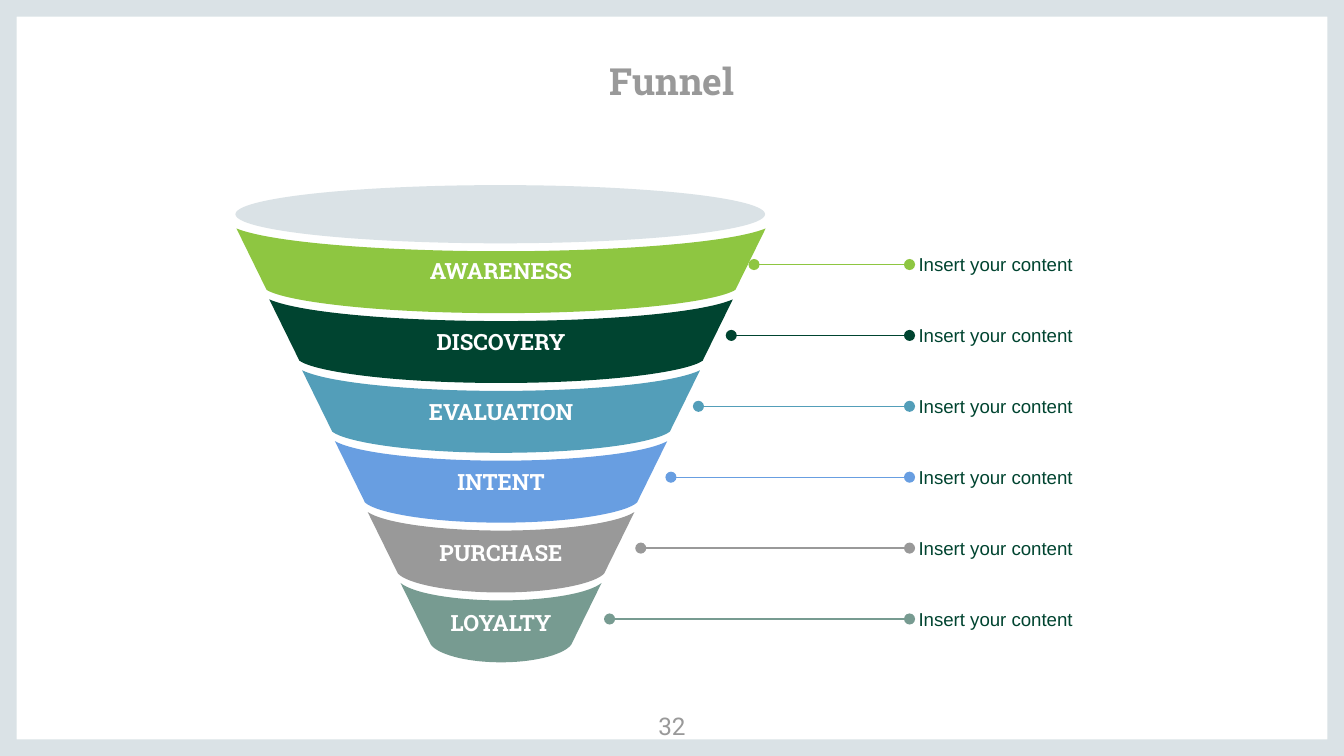
from lxml import etree
from pptx import Presentation, util as u
from pptx.dml.color import RGBColor
from pptx.enum import shapes, text
from pptx.oxml import ns

Cm = u.Cm
WHITE = RGBColor(0xFF, 0xFF, 0xFF)
MIST = RGBColor(0xDA, 0xE2, 0xE6)
GREY = RGBColor(0x99, 0x99, 0x99)
LIME = RGBColor(0x8E, 0xC6, 0x41)
FOREST = RGBColor(0x00, 0x44, 0x30)
TEAL = RGBColor(0x53, 0x9E, 0xB9)
BLUE = RGBColor(0x68, 0x9E, 0xE1)
SAGE = RGBColor(0x77, 0x9B, 0x91)

TITLE = dict(name="Roboto Slab", size=u.Pt(20), bold=True, color=GREY)
NUMBER = dict(name="Roboto", size=u.Pt(13), bold=False, color=GREY)
STAGE = dict(name="Roboto Slab", size=u.Pt(12), bold=True, color=WHITE)
NOTE = dict(name="Arial", size=u.Pt(10), bold=False, color=FOREST)

# Stage name, colour, left end of its callout line (cm)
STAGES = [
    ("AWARENESS", LIME, 14.25),
    ("DISCOVERY", FOREST, 13.82),
    ("EVALUATION", TEAL, 13.2),
    ("INTENT", BLUE, 12.68),
    ("PURCHASE", GREY, 12.11),
    ("LOYALTY", SAGE, 11.52),
]
PITCH = 1.34  # vertical distance between stages


def write(shape, words, style, align, anchor, insets):
    frame = shape.text_frame
    settings = dict(zip(("margin_left", "margin_top", "margin_right", "margin_bottom"),
                        map(Cm, insets)), word_wrap=True, vertical_anchor=anchor)
    for key, value in settings.items():
        setattr(frame, key, value)
    paragraph = frame.paragraphs[0]
    paragraph.alignment = align
    run = paragraph.add_run()
    run.text = words
    for key, value in style.items():
        if key == "color":
            run.font.color.rgb = value
        else:
            setattr(run.font, key, value)


def add_text(slide, box, *content):
    write(slide.shapes.add_textbox(*map(Cm, box)), *content)


def paint(shape, color):
    shape.shadow.inherit = False
    shape.fill.solid()
    shape.fill.fore_color.rgb = color
    shape.line.fill.background()


def bend(shape, starts):
    """Turn three straight segments into one cubic curve at each start index."""
    segments = list(shape._element.iter(ns.qn("a:lnTo")))
    for start in starts:
        first, *others = segments[start:start + 3]
        first.tag = ns.qn("a:cubicBezTo")
        for other in others:
            first.append(other[0])
            other.getparent().remove(other)


def add_band(slide, center, top, half, dip, sag, name, color):
    """One funnel slice, curved above and below and symmetric about its center."""
    low, corner = half - 0.57, top + 1.16
    right = [(0, top + dip), (0.42 * half, top + dip),
             (0.86 * half, top + 0.65 * dip), (half, top),
             (low, corner), (0.92 * low, corner + 0.5 * sag),
             (0.53 * low, corner + sag), (0, corner + sag)]
    outline = right + [(-x, y) for x, y in reversed(right[:-1])]
    points = [(Cm(center + x), Cm(y)) for x, y in outline]
    builder = slide.shapes.build_freeform(*points[0])
    builder.add_line_segments(points[1:], close=True)
    band = builder.convert_to_shape()
    bend(band, (0, 4, 7, 11))
    paint(band, color)
    write(band, name, STAGE, text.PP_ALIGN.CENTER, text.MSO_ANCHOR.MIDDLE,
          (0.18, 0.1, 0.18, 0.1))


def add_funnel(slide, left, top, width):
    center = left + width / 2
    for index, (name, color, _) in enumerate(STAGES):
        add_band(slide, center, top + 0.82 + index * PITCH,
                 width / 2 - index * 0.62, 0.43 - index * 0.02,
                 0.44 - index * 0.02, name, color)
    # Open mouth
    mouth = slide.shapes.add_shape(shapes.MSO_SHAPE.OVAL, Cm(left - 0.02), Cm(top),
                                   Cm(width + 0.01), Cm(1.1))
    paint(mouth, MIST)


def add_callouts(slide, left, top, width):
    for index, (_, color, start) in enumerate(STAGES):
        middle = top + index * PITCH
        line = slide.shapes.add_connector(shapes.MSO_CONNECTOR.STRAIGHT, Cm(start),
                                          Cm(middle), Cm(left - 0.17), Cm(middle))
        line.line.color.rgb = color
        line.line.width = u.Pt(0.75)
        # Round ends, no shadow
        outline = line.line._get_or_add_ln()
        for end in ("a:headEnd", "a:tailEnd"):
            etree.SubElement(outline, ns.qn(end), type="oval")
        etree.SubElement(line._element.spPr, ns.qn("a:effectLst"))
        add_text(slide, (left, middle - 0.48, width, 0.96), "Insert your content",
                 NOTE, text.PP_ALIGN.LEFT, text.MSO_ANCHOR.MIDDLE, (0, 0, 0, 0))


def add_page(slide, width, height):
    border = slide.shapes.add_shape(shapes.MSO_SHAPE.FRAME, 0, 0, Cm(width), Cm(height))
    border.adjustments[0] = 0.022
    paint(border, MIST)
    insets = (0.25,) * 4
    add_text(slide, (1.27, 0.77, width - 2.54, 1.42), "Funnel", TITLE,
             text.PP_ALIGN.CENTER, text.MSO_ANCHOR.BOTTOM, insets)
    add_text(slide, (width / 2 - 0.64, 13.19, 1.28, 1.1), "32", NUMBER,
             text.PP_ALIGN.CENTER, text.MSO_ANCHOR.TOP, insets)


def main():
    presentation = Presentation()
    width, height = 25.4, 14.29
    presentation.slide_width, presentation.slide_height = Cm(width), Cm(height)
    slide = presentation.slides.add_slide(presentation.slide_layouts[6])
    add_page(slide, width, height)
    add_funnel(slide, 4.47, 3.5, 10)
    add_callouts(slide, 17.36, 5, 3.58)
    presentation.save("out.pptx")


if __name__ == "__main__":
    main()
